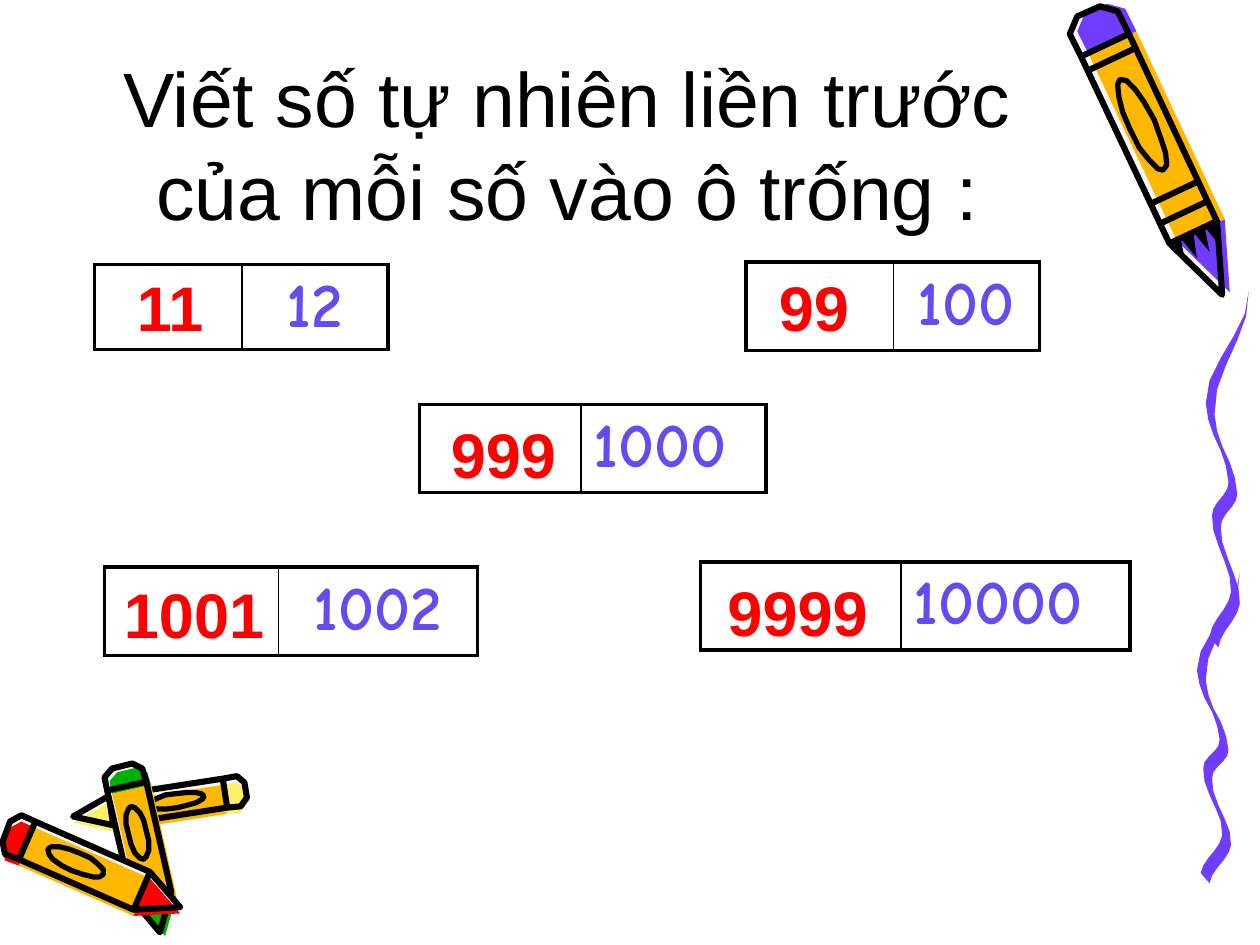
from dataclasses import dataclass
from math import cos, hypot, pi, sin
from lxml.etree import SubElement
from pptx import Presentation
from pptx.dml.color import RGBColor
from pptx.enum.shapes import MSO_CONNECTOR
from pptx.enum.text import MSO_ANCHOR, MSO_AUTO_SIZE, PP_ALIGN
from pptx.oxml.ns import qn
from pptx.util import Pt

PX = 9144  # EMU in one px, at 100 px to the inch

BLACK = RGBColor(0x00, 0x00, 0x00)
PAPER = RGBColor(0xF8, 0xF8, 0xF8)
VIOLET = RGBColor(0x70, 0x3D, 0xFF)
ORANGE = RGBColor(0xFF, 0xB8, 0x00)
YELLOW = RGBColor(0xFF, 0xEF, 0x66)
RED = RGBColor(0xFF, 0x00, 0x00)
GREEN = RGBColor(0x00, 0xB2, 0x00)
NUMBER_BLUE = RGBColor(0x67, 0x4B, 0xF1)

# Places along a crayon, from its tail (0) to its tip (1)
CAP_END, NOSE_START = 0.12, 0.78
EYE_CENTRE, EYE_HALF_LENGTH, EYE_HALF_WIDTH = 0.4, 0.16, 0.24


@dataclass
class Crayon:
    """A crayon from tail to tip; its colours are printed a small shift off its ink lines."""
    tail: tuple
    tip: tuple
    width: int
    shift: tuple
    colour: RGBColor
    bands: tuple = (CAP_END, NOSE_START)
    teeth: int = 0

    def place(self, along, across, shifted=False):
        """Turn a share of the length and of the width (-0.5 to 0.5) into page px."""
        run, rise = self.tip[0] - self.tail[0], self.tip[1] - self.tail[1]
        side = across * self.width / hypot(run, rise)
        x = self.tail[0] + along * run - side * rise
        y = self.tail[1] + along * rise + side * run
        return (x + self.shift[0], y + self.shift[1]) if shifted else (x, y)


CRAYONS = [
    Crayon((864, 9), (970, 234), 42, (6, -2), VIOLET,
           bands=(CAP_END, 0.17, 0.64, 0.71, NOSE_START), teeth=4),
    Crayon((195, 627), (58, 648), 24, (0, 5), YELLOW),
    Crayon((97, 608), (127, 740), 31, (4, 3), GREEN),
    Crayon((5, 660), (143, 720), 33, (0, 5), RED),
]

# The scribble's edge swings between these turns; a slanted nib makes it a ribbon.
TURNS = [(991, 231), (957, 320), (975, 383), (962, 409), (977, 470), (960, 505)]
NIB = (7, 9)
STEPS_PER_TURN = 5

# Left, top, row height and column widths of a table, its number and alignment;
# then left, top and width of the answer box, and the answer.
EXERCISES = [
    ((75, 210, 67, (117, 116)), "12", PP_ALIGN.CENTER, (85, 208, 100), "11"),
    ((592, 208, 70, (117, 116)), "100", PP_ALIGN.CENTER, (600, 208, 92), "99"),
    ((333, 321, 70, (128, 147)), "1000", PP_ALIGN.LEFT, (333, 325, 133), "999"),
    ((83, 450, 70, (138, 158)), "1002", PP_ALIGN.CENTER, (79, 452, 150), "1001"),
    ((556, 446, 70, (159, 182)), "10000", PP_ALIGN.LEFT, (558, 450, 150), "9999"),
]


def write(frame, text, size, font, colour, align, bold=False):
    para = frame.paragraphs[0]
    para.alignment = align
    span = para.add_run()
    span.text = text
    span.font.size = Pt(size)
    span.font.name = font
    span.font.bold = bold
    span.font.color.rgb = colour


def add_freeform(page, points, close=True):
    builder = page.shapes.build_freeform(*points[0], scale=PX)
    builder.add_line_segments(points[1:], close=close)
    shape = builder.convert_to_shape()
    shape.shadow.inherit = False
    return shape


def add_area(page, points, colour):
    area = add_freeform(page, points)
    area.fill.solid()
    area.fill.fore_color.rgb = colour
    area.line.fill.background()
    return area


def add_ink(page, points, width, close=False):
    """Draw a black line through the points, without a fill."""
    ink = add_freeform(page, points, close)
    ink.fill.background()
    ink.line.color.rgb = BLACK
    ink.line.width = Pt(width)
    return ink


def add_band(page, start, end, width):
    ends = [round(value * PX) for value in (*start, *end)]
    band = page.shapes.add_connector(MSO_CONNECTOR.STRAIGHT, *ends)
    band.line.color.rgb = BLACK
    band.line.width = Pt(width)
    SubElement(band._element.spPr, qn("a:effectLst"))
    return band


def add_crayon(page, crayon):
    def trace(corners, shifted=False):
        return [crayon.place(*corner, shifted) for corner in corners]

    cap = [(CAP_END, -0.5), (0.04, -0.5), (0, -0.25), (0, 0.25), (0.04, 0.5), (CAP_END, 0.5)]
    barrel = [(CAP_END, -0.5), (NOSE_START, -0.5), (NOSE_START, 0.5), (CAP_END, 0.5)]
    nose = [(NOSE_START, 0.5), (1, 0), (NOSE_START, -0.5)]
    outline = cap + nose
    eye = [(EYE_CENTRE + EYE_HALF_LENGTH * cos(pi * step / 8),
            EYE_HALF_WIDTH * sin(pi * step / 8)) for step in range(16)]

    parts = [add_area(page, trace(outline), PAPER)]
    for corners, colour in ((cap, crayon.colour), (barrel, ORANGE), (nose, crayon.colour)):
        parts.append(add_area(page, trace(corners, shifted=True), colour))
    parts.append(add_ink(page, trace(outline), 3.5, close=True))
    parts.append(add_ink(page, trace(eye), 3, close=True))
    for along in crayon.bands:
        parts.append(add_band(page, *trace([(along, -0.5), (along, 0.5)]), 3.5))
    if crayon.teeth:
        half_teeth = 2 * crayon.teeth
        collar = [(NOSE_START + 0.08 * (step % 2), step / half_teeth - 0.5)
                  for step in range(half_teeth + 1)]
        parts.append(add_area(page, trace(collar), BLACK))
    page.shapes.add_group_shape(parts)


def swing_between_turns():
    """Join the turns with cosine curves, so that the edge is upright at each turn."""
    edge = []
    for (x, y), (next_x, next_y) in zip(TURNS, TURNS[1:]):
        for step in range(STEPS_PER_TURN):
            share = step / STEPS_PER_TURN
            ease = (1 - cos(pi * share)) / 2
            edge.append((x + ease * (next_x - x), y + share * (next_y - y)))
    return edge + [TURNS[-1]]


def add_scribble(page):
    """Draw the wave twice: the lower one is moved to the left and flattened."""
    edge = swing_between_turns()
    far_edge = []
    for step, (x, y) in enumerate(edge):
        pressure = min(1, step / STEPS_PER_TURN)
        far_edge.append((x + pressure * NIB[0], y + pressure * NIB[1]))
    ribbon = edge + far_edge[::-1]
    first_y = TURNS[0][1]
    waves = []
    for left_move, top, stretch in ((7, 455, 0.87), (0, first_y, 1)):
        points = [(x - left_move, top + stretch * (y - first_y)) for x, y in ribbon]
        waves.append(add_area(page, points, VIOLET))
    page.shapes.add_group_shape(waves)


def set_borders(cell, widths):
    """Draw black borders; widths maps the sides L, R, T, B, in that order, to points."""
    properties = cell._tc.get_or_add_tcPr()
    for side, width in widths.items():
        line = SubElement(properties, qn(f"a:ln{side}"), w=str(Pt(width)))
        fill = SubElement(line, qn("a:solidFill"))
        SubElement(fill, qn("a:srgbClr"), val=str(BLACK))


def add_number_table(page, left, top, height, widths, number, align):
    """Add an empty answer cell followed by the given number."""
    table = page.shapes.add_table(
        1, 2, left * PX, top * PX, sum(widths) * PX, height * PX).table
    table.first_row = table.horz_banding = False
    for column, width in zip(table.columns, widths):
        column.width = width * PX
    answer_cell, number_cell = table.cell(0, 0), table.cell(0, 1)
    set_borders(answer_cell, {"L": 2.25, "R": 1, "T": 2.25, "B": 2.25})
    set_borders(number_cell, {"L": 1, "R": 2.25, "T": 2.25, "B": 2.25})
    for cell in (answer_cell, number_cell):
        cell.fill.background()
    write(number_cell.text_frame, number, 36, "Comic Neue", NUMBER_BLUE, align, bold=True)


def add_answer(page, left, top, width, text):
    box = page.shapes.add_textbox(left * PX, top * PX, width * PX, 70 * PX)
    box.text_frame.word_wrap = True
    write(box.text_frame, text, 36, "Arial", RED, PP_ALIGN.CENTER, bold=True)


def set_title(page, text):
    title = page.shapes.title
    title.left, title.top, title.width, title.height = (
        value * PX for value in (75, 17, 751, 175))
    frame = title.text_frame
    frame.word_wrap = True
    frame.auto_size = MSO_AUTO_SIZE.NONE
    frame.vertical_anchor = MSO_ANCHOR.BOTTOM
    write(frame, text, 44, "Arial", BLACK, PP_ALIGN.CENTER)


def main():
    deck = Presentation()
    deck.slide_width, deck.slide_height = 1000 * PX, 750 * PX
    page = deck.slides.add_slide(deck.slide_layouts[5])
    for crayon in CRAYONS:
        add_crayon(page, crayon)
    add_scribble(page)
    set_title(page, "Viết số tự nhiên liền trước của mỗi số vào ô trống :")
    for table, number, align, answer_box, answer in EXERCISES:
        add_number_table(page, *table, number, align)
        add_answer(page, *answer_box, answer)
    deck.save("out.pptx")


if __name__ == "__main__":
    main()
